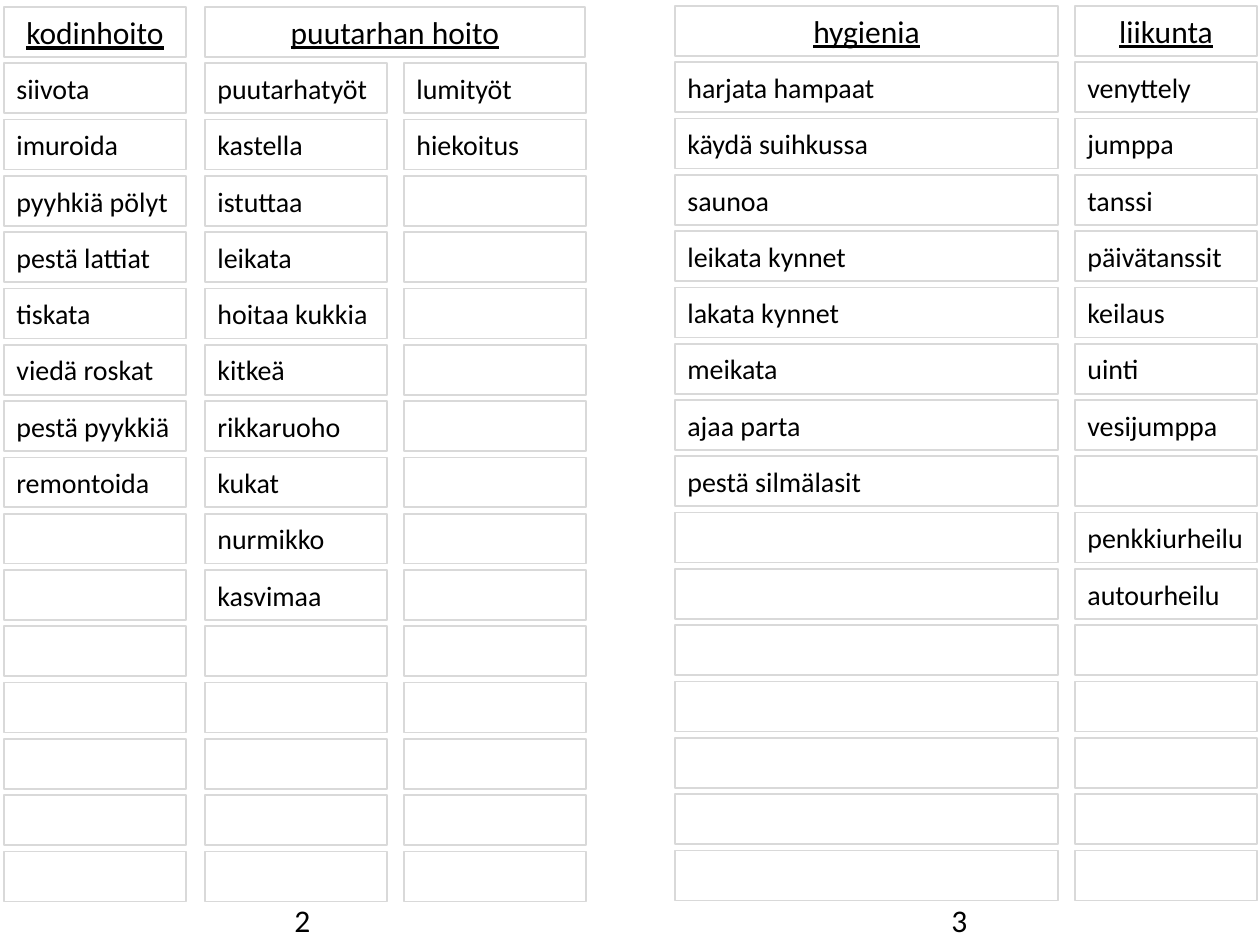
"""Build a Finnish activity word list spread with five columns of boxes."""
import pptx
import pptx.dml.color
import pptx.enum.shapes
import pptx.enum.text
import pptx.util

PX = 914400 / 126
BLACK = pptx.dml.color.RGBColor(0, 0, 0)
LINE_GREY = pptx.dml.color.RGBColor(0xD9, 0xD9, 0xD9)
FONT = "Calibri"
ROWS = 15
ROW_PITCH = 56.3
BOX_HEIGHT = 50
LEFT_TOP, RIGHT_TOP = 7, 6

HEADINGS = [
    ("kodinhoito", 4, LEFT_TOP, 182),
    ("puutarhan hoito", 205, LEFT_TOP, 380),
    ("hygienia", 675, RIGHT_TOP, 383),
    ("liikunta", 1075, RIGHT_TOP, 182),
]
COLUMNS = [
    (4, LEFT_TOP, 182, ["siivota", "imuroida", "pyyhkiä pölyt", "pestä lattiat", "tiskata",
                        "viedä roskat", "pestä pyykkiä", "remontoida"]),
    (205, LEFT_TOP, 182, ["puutarhatyöt", "kastella", "istuttaa", "leikata", "hoitaa kukkia",
                          "kitkeä", "rikkaruoho", "kukat", "nurmikko", "kasvimaa"]),
    (404, LEFT_TOP, 182, ["lumityöt", "hiekoitus"]),
    (675, RIGHT_TOP, 383, ["harjata hampaat", "käydä suihkussa", "saunoa", "leikata kynnet",
                           "lakata kynnet", "meikata", "ajaa parta", "pestä silmälasit"]),
    (1075, RIGHT_TOP, 182, ["venyttely", "jumppa", "tanssi", "päivätanssit", "keilaus", "uinti",
                            "vesijumppa", "", "penkkiurheilu", "autourheilu"]),
]
PAGE_NUMBERS = [("2", 282, 43), ("3", 939, 54)]


def scaled(*lengths):
    return [round(length * PX) for length in lengths]


def write(shape, text, size, align, underline=None):
    frame = shape.text_frame
    frame.word_wrap = True
    frame.auto_size = pptx.enum.text.MSO_AUTO_SIZE.NONE
    para = frame.paragraphs[0]
    para.text = text
    para.alignment = align
    para.font.name = FONT
    para.font.size = pptx.util.Pt(size)
    para.font.underline = underline
    para.font.color.rgb = BLACK


def outline(box):
    box.fill.background()
    box.line.color.rgb = LINE_GREY
    box.line.width = pptx.util.Pt(1)
    box.text_frame.vertical_anchor = pptx.enum.text.MSO_ANCHOR.MIDDLE


def add_box(slide, left, top, width):
    box = slide.shapes.add_shape(pptx.enum.shapes.MSO_SHAPE.RECTANGLE,
                                 *scaled(left, top, width, BOX_HEIGHT))
    box.shadow.inherit = False
    outline(box)
    return box


def main():
    deck = pptx.Presentation()
    deck.slide_width, deck.slide_height = scaled(1260, 945)
    slide = deck.slides.add_slide(deck.slide_layouts[5])
    align = pptx.enum.text.PP_ALIGN

    for index, (heading, left, top, width) in enumerate(HEADINGS):
        if index == 0:
            box = slide.shapes.title
            box.left, box.top, box.width, box.height = scaled(left, top, width, BOX_HEIGHT)
            outline(box)
        else:
            box = add_box(slide, left, top, width)
        write(box, heading, 18, align.CENTER, True)

    for left, top, width, words in COLUMNS:
        for row in range(ROWS):
            box = add_box(slide, left, top + (row + 1) * ROW_PITCH, width)
            if row < len(words) and words[row]:
                write(box, words[row], 16, align.LEFT)

    for number, left, width in PAGE_NUMBERS:
        box = slide.shapes.add_textbox(*scaled(left, 895, width, BOX_HEIGHT))
        write(box, number, 18, align.LEFT)

    deck.save("out.pptx")


if __name__ == "__main__":
    main()
